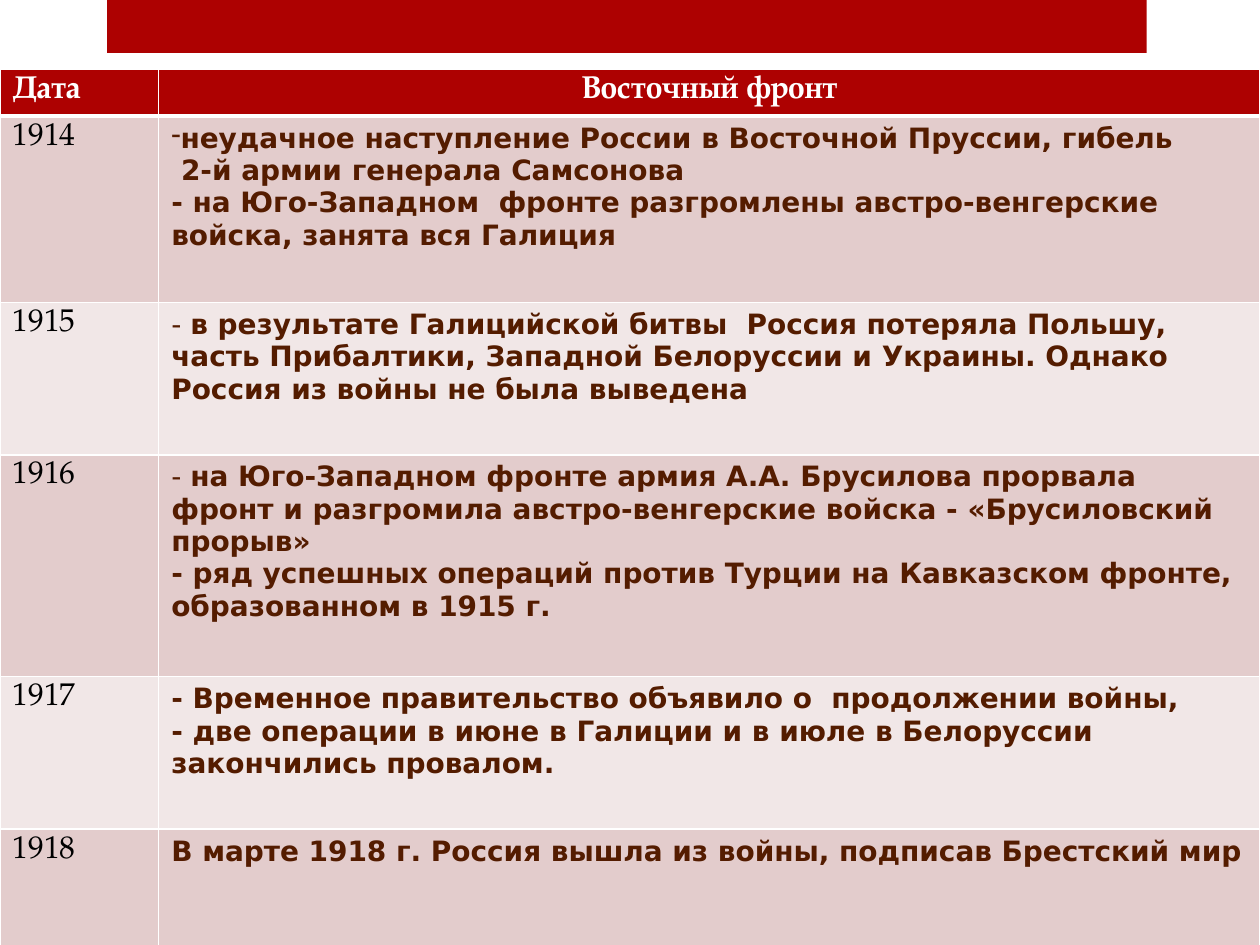
from dataclasses import dataclass

from lxml import etree
from pptx import Presentation
from pptx.dml.color import RGBColor
from pptx.enum.shapes import MSO_SHAPE
from pptx.enum.text import PP_ALIGN
from pptx.oxml.ns import qn
from pptx.util import Inches, Pt

RECTANGLE = MSO_SHAPE.RECTANGLE
CENTER = PP_ALIGN.CENTER


@dataclass(frozen=True)
class Theme:
    """Colours and type formats of the slide."""

    accent: str = "AD0101"
    bands: tuple = ("E3CCCC", "F1E7E7")
    border: str = "FFFFFF"
    header: tuple = ("TeX Gyre Pagella", 18, True, "FFFFFF")
    year: tuple = ("TeX Gyre Pagella", 18, False, "000000")
    event: tuple = ("DejaVu Sans", 16, True, "541C00")
    dash: tuple = ("DejaVu Sans", 16, False, "541C00")


THEME = Theme()
BULLET = "•"
LIGHT_DASH = "– "
COLUMN_WIDTHS = (1.26, 8.74)
HEADERS = ("Дата", "Восточный фронт")
HEADER_HEIGHT = 0.37
YEARS = (
    ("1914", 1.48, (
        (BULLET, "неудачное наступление России в Восточной Пруссии, гибель"),
        ("", " 2-й армии генерала Самсонова"),
        ("", "- на Юго-Западном  фронте разгромлены австро-венгерские войска, занята вся Галиция"),
    )),
    ("1915", 1.21, (
        (LIGHT_DASH, "в результате Галицийской битвы  Россия потеряла Польшу, часть Прибалтики, "
                     "Западной Белоруссии и Украины. Однако Россия из войны не была выведена"),
    )),
    ("1916", 1.76, (
        (LIGHT_DASH, "на Юго-Западном фронте армия А.А. Брусилова прорвала фронт и разгромила "
                     "австро-венгерские войска - «Брусиловский прорыв»"),
        ("", "- ряд успешных операций против Турции на Кавказском фронте, образованном в 1915 г."),
    )),
    ("1917", 1.21, (
        ("", "- Временное правительство объявило о  продолжении войны,"),
        ("", "- две операции в июне в Галиции и в июле в Белоруссии закончились провалом."),
    )),
    ("1918", 0.93, (
        ("", "В марте 1918 г. Россия вышла из войны, подписав Брестский мир"),
    )),
)


def add_run(paragraph, text, style):
    """Append a run in one of the theme's type formats."""
    name, size, bold, color = style
    run = paragraph.add_run()
    run.text = text
    for attribute, value in {"name": name, "size": Pt(size), "bold": bold}.items():
        setattr(run.font, attribute, value)
    run.font.color.rgb = RGBColor.from_string(color)


def add_dash_bullet(paragraph):
    """Give a paragraph a dash bullet without a hanging indent."""
    properties = paragraph._p.get_or_add_pPr()
    for name, value in {"marL": "0", "indent": "0"}.items():
        properties.set(name, value)
    etree.SubElement(properties, qn("a:buFontTx"))
    etree.SubElement(properties, qn("a:buChar")).set("char", "-")


def format_cell(cell, fill, top=1, bottom=1):
    """Set the borders and the fill of a table cell."""
    properties = cell._tc.get_or_add_tcPr()
    for side, width in {"lnL": 1, "lnR": 1, "lnT": top, "lnB": bottom}.items():
        line = etree.SubElement(properties, qn(f"a:{side}"))
        line.set("w", str(Pt(width)))
        solid = etree.SubElement(line, qn("a:solidFill"))
        etree.SubElement(solid, qn("a:srgbClr")).set("val", THEME.border)
    cell.fill.solid()
    cell.fill.fore_color.rgb = RGBColor.from_string(fill)


def write_events(cell, events):
    """Write one paragraph for each event of a year."""
    frame = cell.text_frame
    for index, (marker, text) in enumerate(events):
        paragraph = frame.add_paragraph() if index else frame.paragraphs[0]
        if marker == BULLET:
            add_dash_bullet(paragraph)
        elif marker == LIGHT_DASH:
            add_run(paragraph, "- ", THEME.dash)
        add_run(paragraph, text, THEME.event)


def add_top_band(slide, left, top, width, height):
    """Draw the plain band at the top of the slide."""
    band = slide.shapes.add_shape(RECTANGLE, left, top, width, height)
    band.shadow.inherit = False
    band.fill.solid()
    band.fill.fore_color.rgb = RGBColor.from_string(THEME.accent)
    band.line.fill.background()


def add_front_table(slide, left, top, width, height):
    """Build the table of events on the front, year by year."""
    table = slide.shapes.add_table(
        len(YEARS) + 1, len(HEADERS), left, top, width, height).table
    for column, column_width in zip(table.columns, COLUMN_WIDTHS):
        column.width = Inches(column_width)
    table.rows[0].height = Inches(HEADER_HEIGHT)
    for index, header in enumerate(HEADERS):
        cell = table.cell(0, index)
        format_cell(cell, THEME.accent, bottom=3)
        add_run(cell.text_frame.paragraphs[0], header, THEME.header)
    table.cell(0, 1).text_frame.paragraphs[0].alignment = CENTER
    for row, (year, row_height, events) in enumerate(YEARS, start=1):
        table.rows[row].height = Inches(row_height)
        year_cell, event_cell = table.cell(row, 0), table.cell(row, 1)
        for cell in (year_cell, event_cell):
            format_cell(cell, THEME.bands[(row - 1) % 2], top=3 if row == 1 else 1)
        add_run(year_cell.text_frame.paragraphs[0], year, THEME.year)
        write_events(event_cell, events)


def main():
    """Build and save the presentation."""
    presentation = Presentation()
    presentation.slide_width = Inches(10)
    presentation.slide_height = Inches(7.5)
    slide = presentation.slides.add_slide(presentation.slide_layouts[6])
    add_top_band(slide, Inches(0.85), Inches(0), Inches(8.25), Inches(0.42))
    table_height = HEADER_HEIGHT + sum(height for _, height, _ in YEARS)
    add_front_table(slide, Inches(0), Inches(0.55), Inches(sum(COLUMN_WIDTHS)),
                    Inches(table_height))
    presentation.save("out.pptx")


if __name__ == "__main__":
    main()
